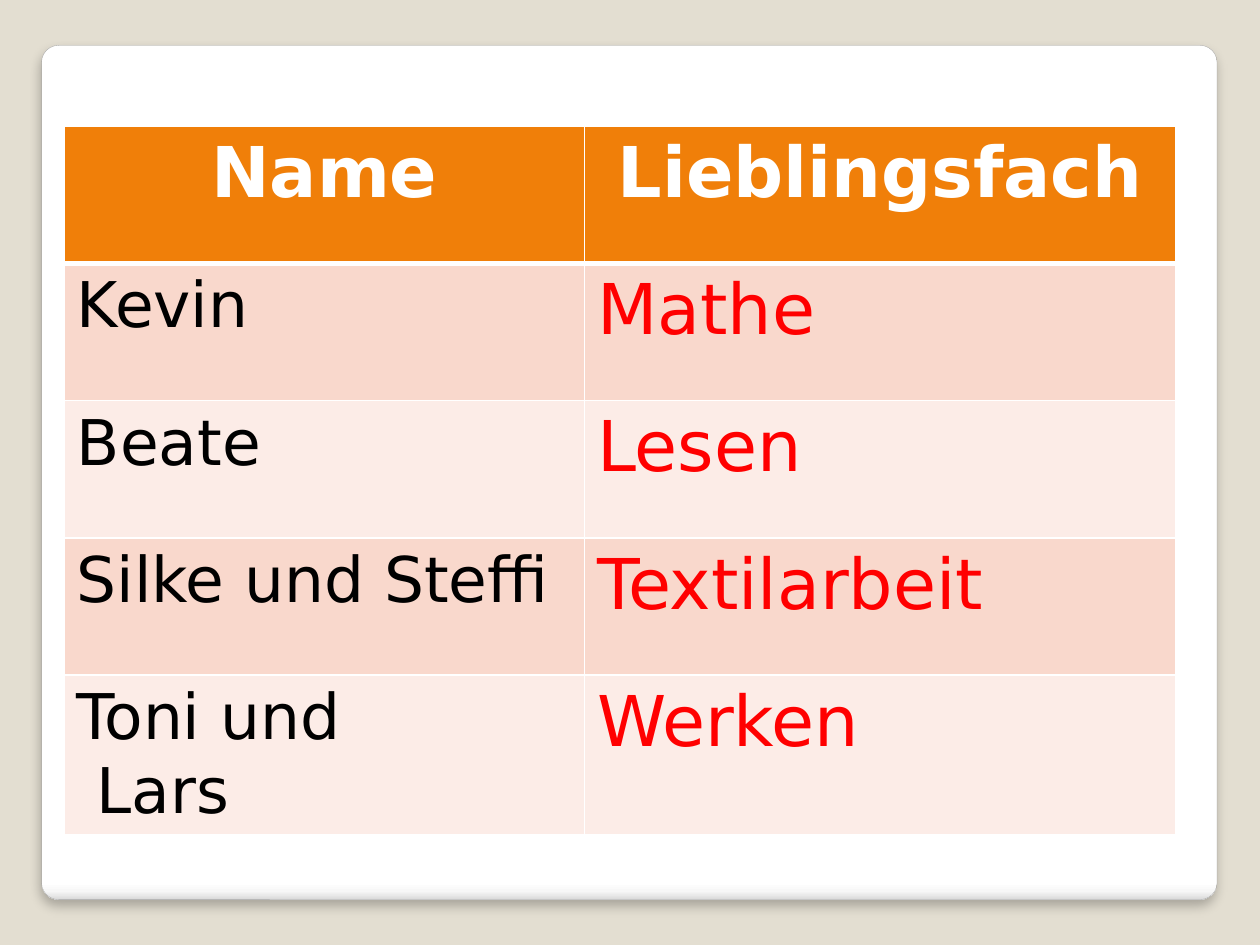
from lxml import etree
from pptx import Presentation
from pptx.dml.color import RGBColor
from pptx.enum.shapes import MSO_SHAPE
from pptx.enum.text import PP_ALIGN
from pptx.oxml import parse_xml
from pptx.oxml.ns import nsdecls, qn
from pptx.util import Inches, Pt

COLORS = {
    "background": "E3DED1", "white": "FFFFFF", "outline": "A4A4A4",
    "header": "F07F09", "odd row": "F9D8CC", "even row": "FCECE7",
    "name": "000000", "subject": "FF0000",
}
ROWS = [
    ("Name", "Lieblingsfach"),
    ("Kevin", "Mathe"),
    ("Beate", "Lesen"),
    ("Silke und Steffi", "Textilarbeit"),
    ("Toni und\n Lars", "Werken"),
]


def rgb(key):
    return RGBColor.from_string(COLORS[key])


def set_borders(cell, widths):
    """Draw white cell borders; widths maps a side (L, R, T, B) to points."""
    properties = cell._tc.get_or_add_tcPr()
    for position, (side, width) in enumerate(widths.items()):
        properties.insert(position, parse_xml(
            f'<a:ln{side} {nsdecls("a")} w="{Pt(width)}"><a:solidFill>'
            f'<a:srgbClr val="{COLORS["white"]}"/></a:solidFill></a:ln{side}>'))


prs = Presentation()
prs.slide_width, prs.slide_height = Inches(10), Inches(7.5)
slide = prs.slides.add_slide(prs.slide_layouts[6])
slide.background.fill.solid()
slide.background.fill.fore_color.rgb = rgb("background")

# White card with a shaded lower edge and a soft shadow
card = slide.shapes.add_shape(
    MSO_SHAPE.ROUNDED_RECTANGLE, Inches(0.33), Inches(0.36), Inches(9.33), Inches(6.78))
card.adjustments[0] = 0.02
card.line.color.rgb = rgb("outline")
card.line.width = Pt(0.16)
card.fill.gradient()
card.fill.gradient_angle = 270
stops = card._element.spPr.find(".//" + qn("a:gsLst"))
for stop in list(stops):
    stops.remove(stop)
for percent, color in ((0, "FFFFFF"), (98, "FFFFFF"), (99, "F7F7F7"), (100, "DADADA")):
    stop = etree.SubElement(stops, qn("a:gs"), pos=str(percent * 1000))
    etree.SubElement(stop, qn("a:srgbClr"), val=color)
card.shadow.inherit = False
card._element.spPr.find(qn("a:effectLst")).append(parse_xml(
    f'<a:outerShdw {nsdecls("a")} blurRad="{Pt(6)}" dist="{Pt(4)}" dir="5400000" '
    'algn="t" rotWithShape="0"><a:srgbClr val="000000"><a:alpha val="25000"/>'
    '</a:srgbClr></a:outerShdw>'))

# Table of names and favourite subjects
subjects = slide.shapes.add_table(
    len(ROWS), 2, Inches(0.51), Inches(1), Inches(8.82), Inches(5.45)).table
subjects.columns[0].width = Inches(4.13)
subjects.columns[1].width = Inches(4.69)

for r, row in enumerate(ROWS):
    subjects.rows[r].height = Inches(1.09)
    is_header = r == 0
    fill = "header" if is_header else "odd row" if r % 2 else "even row"
    for c, text in enumerate(row):
        cell = subjects.cell(r, c)
        cell.text = text
        cell.fill.solid()
        cell.fill.fore_color.rgb = rgb(fill)
        set_borders(cell, {"L": 1, "R": 1, "T": 3 if r == 1 else 1, "B": 3 if is_header else 1})
        for paragraph in cell.text_frame.paragraphs:
            paragraph.alignment = PP_ALIGN.CENTER if is_header else PP_ALIGN.LEFT
            font = paragraph.font
            font.name = "DejaVu Sans"
            font.bold = is_header
            font.size = Pt(40 if is_header or c == 1 else 36)
            font.color.rgb = rgb("white" if is_header else ("name", "subject")[c])

prs.save("out.pptx")
